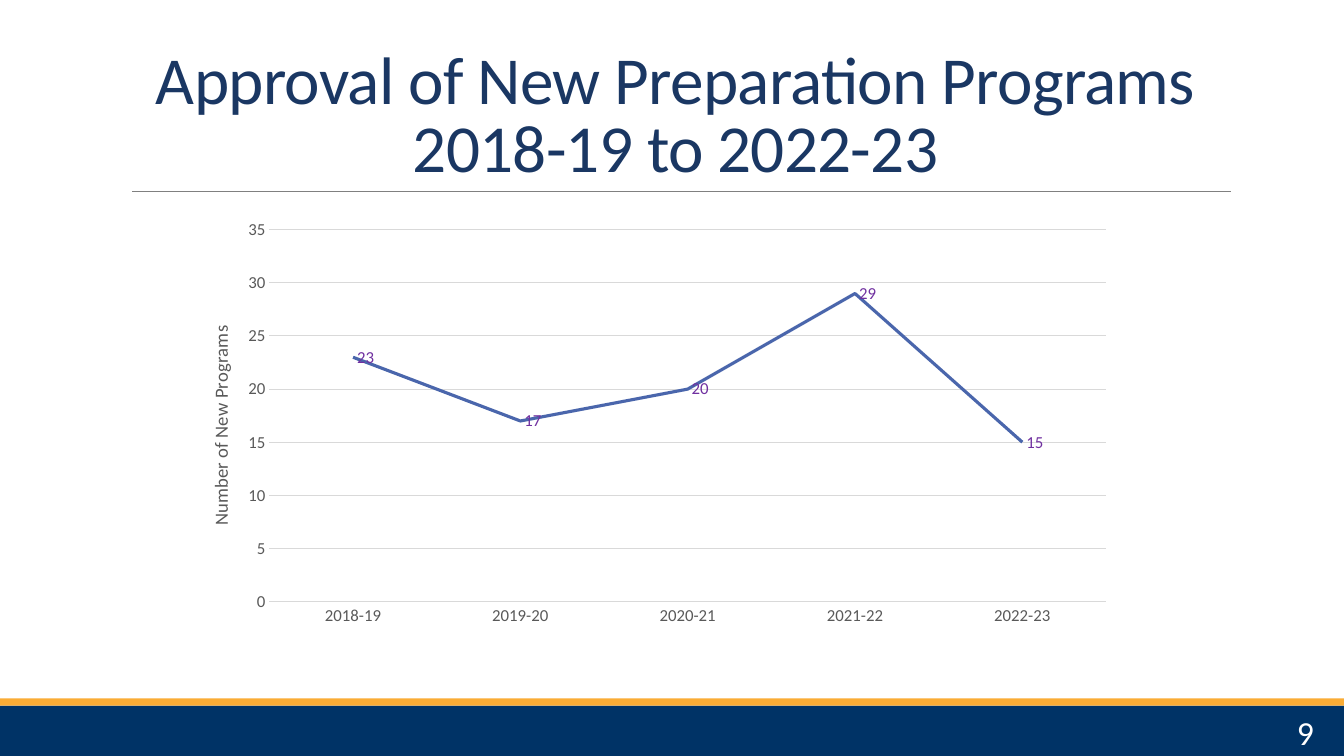
from dataclasses import dataclass

from lxml import etree
from pptx import Presentation
from pptx.chart.data import CategoryChartData
from pptx.dml.color import RGBColor
from pptx.enum.chart import XL_CHART_TYPE, XL_LABEL_POSITION, XL_TICK_MARK
from pptx.enum.shapes import MSO_CONNECTOR, MSO_SHAPE
from pptx.enum.text import MSO_ANCHOR, PP_ALIGN
from pptx.oxml import parse_xml
from pptx.oxml.ns import nsdecls, qn
from pptx.util import Inches, Pt

LINE_CHART = XL_CHART_TYPE.LINE
LABEL_RIGHT = XL_LABEL_POSITION.RIGHT
NO_TICK = XL_TICK_MARK.NONE
STRAIGHT = MSO_CONNECTOR.STRAIGHT
RECTANGLE = MSO_SHAPE.RECTANGLE
BOTTOM, MIDDLE = MSO_ANCHOR.BOTTOM, MSO_ANCHOR.MIDDLE
CENTER, RIGHT = PP_ALIGN.CENTER, PP_ALIGN.RIGHT


@dataclass(frozen=True)
class Theme:
    font: str = "Calibri"
    title: str = "1A3763"
    navy: str = "003366"
    gold: str = "FAAC35"
    rule: str = "808080"
    white: str = "FFFFFF"
    grid: str = "D9D9D9"
    axis_text: str = "595959"
    series: str = "4A66AC"
    label: str = "7030A0"
    title_size: float = 48
    number_size: float = 24
    axis_title_size: float = 13.3
    chart_size: float = 12


def rgb(value):
    return RGBColor.from_string(value)


def manual_layout(x, y, size=None):
    """Chart layout in fractions of the chart area; a size means the inner plot."""
    target = '<c:layoutTarget val="inner"/>' if size else ""
    values = {"x": x, "y": y}
    if size:
        values.update(w=size[0], h=size[1])
    body = "".join(f'<c:{key} val="{value}"/>' for key, value in values.items())
    return parse_xml(
        f'<c:layout {nsdecls("c")}><c:manualLayout>{target}<c:xMode val="edge"/>'
        f'<c:yMode val="edge"/>{body}</c:manualLayout></c:layout>'
    )


class SlideBuilder:
    def __init__(self, slide, theme):
        self.slide = slide
        self.theme = theme

    def style(self, font, size, color):
        font.name = self.theme.font
        font.size = Pt(size)
        font.bold = False
        font.color.rgb = rgb(color)

    def band(self, top, height, color):
        band = self.slide.shapes.add_shape(
            RECTANGLE, 0, Inches(top), Inches(13.33), Inches(height))
        band.shadow.inherit = False
        band.fill.solid()
        band.fill.fore_color.rgb = rgb(color)
        band.line.fill.background()

    def rule(self, left, right, y):
        rule = self.slide.shapes.add_connector(
            STRAIGHT, Inches(left), Inches(y), Inches(right), Inches(y))
        rule.line.color.rgb = rgb(self.theme.rule)
        rule.line.width = Pt(0.5)
        etree.SubElement(rule._element.spPr, qn("a:effectLst"))

    def text(self, box, lines, size, color, align, anchor, line_spacing=1.0, tracking=0):
        frame = self.slide.shapes.add_textbox(*map(Inches, box)).text_frame
        frame.word_wrap = True
        frame.vertical_anchor = anchor
        paragraph = frame.paragraphs[0]
        paragraph.alignment = align
        paragraph.line_spacing = line_spacing
        for index, line in enumerate(lines):
            if index:
                paragraph.add_line_break()
            run = paragraph.add_run()
            run.text = line
            self.style(run.font, size, color)
            if tracking:
                run.font._element.set("spc", str(round(tracking * 100)))

    def line_chart(self, box, categories, series_name, values, axis_title):
        theme = self.theme
        data = CategoryChartData()
        data.categories = categories
        data.add_series(series_name, values)
        chart = self.slide.shapes.add_chart(LINE_CHART, *map(Inches, box), data).chart
        chart.has_legend = False
        chart.has_title = False
        self.style(chart.font, theme.chart_size, theme.axis_text)

        # Axes and gridlines
        years, counts = chart.category_axis, chart.value_axis
        for axis in (years, counts):
            axis.major_tick_mark = axis.minor_tick_mark = NO_TICK
            self.style(axis.tick_labels.font, theme.chart_size, theme.axis_text)
        counts.minimum_scale, counts.maximum_scale, counts.major_unit = 0, 35, 5
        counts.format.line.fill.background()
        for line in (years.format.line, counts.major_gridlines.format.line):
            line.color.rgb = rgb(theme.grid)
            line.width = Pt(0.75)

        # Value axis title
        title = counts.axis_title
        run = title.text_frame.paragraphs[0].add_run()
        run.text = axis_title
        self.style(run.font, theme.axis_title_size, theme.axis_text)
        body = title.text_frame._txBody.find(qn("a:bodyPr"))
        body.set("rot", "-5400000")
        body.set("vert", "horz")
        for old in title._element.findall(qn("c:layout")):
            title._element.remove(old)
        title._element.find(qn("c:tx")).addnext(manual_layout(0.016, 0.255))

        # Series and its value labels
        plot = chart.plots[0]
        plot.vary_by_categories = False
        programs = plot.series[0]
        programs.smooth = False
        programs.format.line.color.rgb = rgb(theme.series)
        programs.format.line.width = Pt(2.25)
        labels = programs.data_labels
        labels.show_value = True
        labels.position = LABEL_RIGHT
        self.style(labels.font, theme.chart_size, theme.label)

        # Plot area placement
        area = chart._chartSpace.chart.plotArea
        for old in area.findall(qn("c:layout")):
            area.remove(old)
        area.insert(0, manual_layout(0.086, 0.04, (0.901, 0.866)))


def main():
    presentation = Presentation()
    presentation.slide_width = Inches(13.33)
    presentation.slide_height = Inches(7.5)
    theme = Theme()
    builder = SlideBuilder(
        presentation.slides.add_slide(presentation.slide_layouts[6]), theme)

    # Footer bands and title rule
    builder.band(7, 0.5, theme.navy)
    builder.band(6.93, 0.07, theme.gold)
    builder.rule(1.31, 12.21, 1.9)

    # Title and page number
    builder.text((1.2, 0.31, 11, 1.59),
                 ["Approval of New Preparation Programs", "2018-19 to 2022-23"],
                 theme.title_size, theme.title, CENTER, BOTTOM,
                 line_spacing=0.85, tracking=-0.5)
    builder.text((11.7, 7.06, 1.43, 0.4), ["9"],
                 theme.number_size, theme.white, RIGHT, MIDDLE)

    # Approved programs by year
    builder.line_chart((1.88, 2.11, 9.21, 4.26),
                       ["2018-19", "2019-20", "2020-21", "2021-22", "2022-23"],
                       "Series 1", [23, 17, 20, 29, 15], "Number of New Programs")

    presentation.save("out.pptx")


if __name__ == "__main__":
    main()
